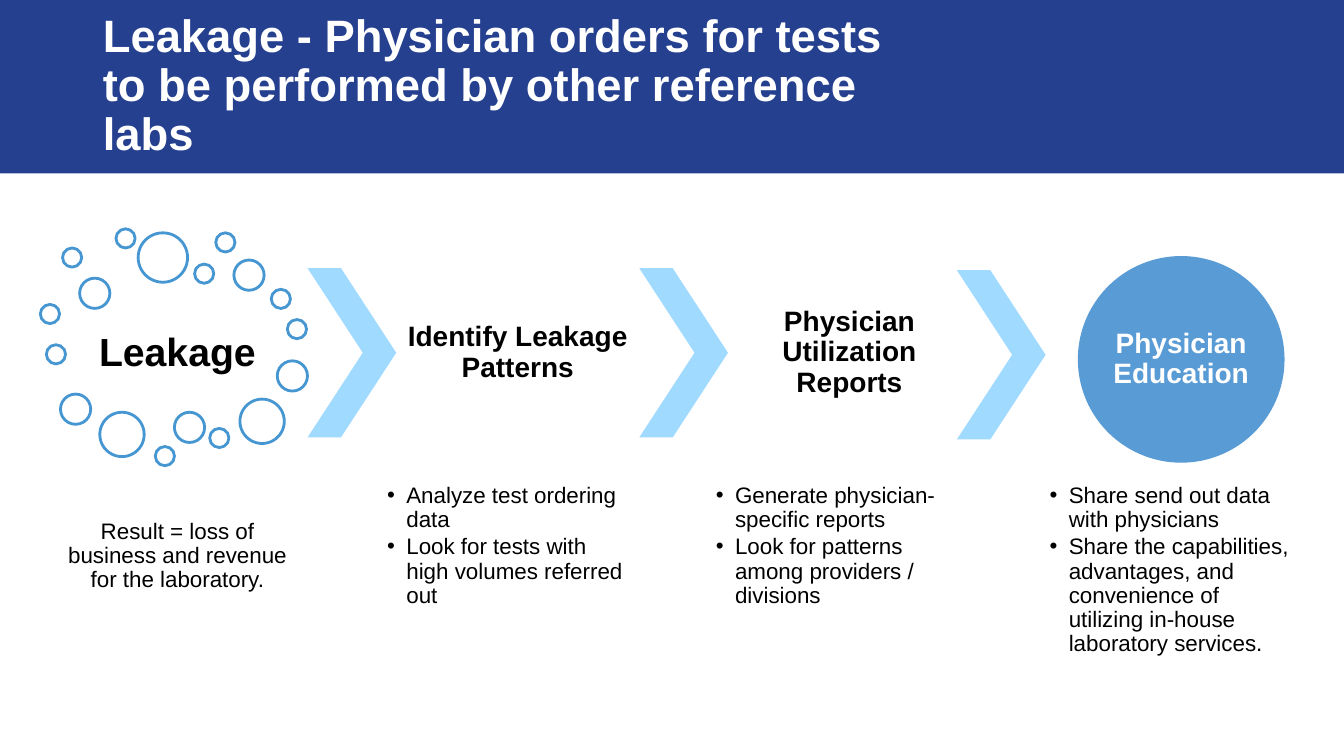
from dataclasses import dataclass

from lxml import etree
from pptx import Presentation
from pptx.dml.color import RGBColor
from pptx.enum.shapes import MSO_SHAPE
from pptx.enum.text import MSO_ANCHOR, MSO_AUTO_SIZE, PP_ALIGN
from pptx.oxml.ns import qn
from pptx.util import Inches, Pt

RECT, OVAL, CHEVRON = MSO_SHAPE.RECTANGLE, MSO_SHAPE.OVAL, MSO_SHAPE.CHEVRON
TOP, MIDDLE = MSO_ANCHOR.TOP, MSO_ANCHOR.MIDDLE
LEFT, CENTER = PP_ALIGN.LEFT, PP_ALIGN.CENTER
NO_AUTOFIT = MSO_AUTO_SIZE.NONE
COMPARISON_LAYOUT = 4  # a title and four body placeholders


@dataclass(frozen=True)
class Theme:
    font: str = "Arial"
    navy: str = "25408F"
    white: str = "FFFFFF"
    black: str = "000000"
    ring: str = "4696D2"
    arrow: str = "A1DAFF"
    circle: str = "599BD5"
    title: float = 32.4
    lead: float = 28
    step: float = 20
    body: float = 16


class SlideBuilder:
    def __init__(self, prs, theme):
        self.theme = theme
        self.slide = prs.slides.add_slide(prs.slide_layouts[COMPARISON_LAYOUT])

    def set_text(self, sp, lines, size, color, bold=False, align=CENTER,
                 anchor=MIDDLE, inset=(0.02, 0.02), bullet=False):
        """Fill a shape's text frame, one paragraph per line."""
        tf = sp.text_frame
        dx, dy = map(Inches, inset)
        frame = dict(word_wrap=True, auto_size=NO_AUTOFIT, vertical_anchor=anchor,
                     margin_left=dx, margin_right=dx, margin_top=dy, margin_bottom=dy)
        for name, value in frame.items():
            setattr(tf, name, value)
        for i, line in enumerate(lines):
            p = tf.paragraphs[0] if i == 0 else tf.add_paragraph()
            self.mark(p, bullet)
            layout = dict(alignment=align, line_spacing=0.9,
                          space_before=Pt(2.4 if i else 0), space_after=Pt(0))
            for name, value in layout.items():
                setattr(p, name, value)
            r = p.add_run()
            r.text = line
            for name, value in dict(name=self.theme.font, size=Pt(size), bold=bold).items():
                setattr(r.font, name, value)
            r.font.color.rgb = RGBColor.from_string(color)

    def mark(self, p, bullet):
        """Set the paragraph's indent and its bullet, or no bullet."""
        pPr = p._p.get_or_add_pPr()
        indent = Inches(0.19) if bullet else 0
        pPr.set("marL", str(indent))
        pPr.set("indent", str(-indent))
        if bullet:
            etree.SubElement(pPr, qn("a:buFont"), typeface=self.theme.font)
            etree.SubElement(pPr, qn("a:buChar"), char="•")
        else:
            etree.SubElement(pPr, qn("a:buNone"))

    def placeholder(self, idx, box, lines, size, color, **style):
        sp = self.slide.placeholders[idx]
        sp.left, sp.top, sp.width, sp.height = map(Inches, box)
        self.set_text(sp, lines, size, color, **style)

    def label(self, box, text, size):
        sp = self.slide.shapes.add_textbox(*map(Inches, box))
        self.set_text(sp, [text], size, self.theme.black, bold=True)

    def shape(self, kind, box, fill, line=None):
        sp = self.slide.shapes.add_shape(kind, *map(Inches, box))
        sp.shadow.inherit = False
        sp.fill.solid()
        sp.fill.fore_color.rgb = RGBColor.from_string(fill)
        if line:
            sp.line.color.rgb = RGBColor.from_string(line)
            sp.line.width = Pt(2)
        else:
            sp.line.fill.background()
        return sp

    def banner(self, box):
        """Draw the title band behind everything else."""
        sp = self.shape(RECT, box, self.theme.navy)
        self.slide.shapes._spTree.insert(2, sp._element)

    def bubble(self, left, top, size):
        self.shape(OVAL, (left, top, size, size), self.theme.white, self.theme.ring)

    def arrow(self, left, top):
        sp = self.shape(CHEVRON, (left, top, 0.88, 1.68), self.theme.arrow)
        sp.adjustments[0] = 0.623


BUBBLES = {  # diameter: (left, top) of each
    0.19: [(0.4, 3.02), (0.62, 2.46), (1.15, 2.27), (1.93, 2.62), (2.14, 2.31),
           (2.69, 2.87), (2.85, 3.17), (0.46, 3.42), (1.54, 4.43), (2.08, 4.25)],
    0.3: [(0.79, 2.76), (2.32, 2.58), (0.6, 3.91), (1.73, 4.09), (2.75, 3.58)],
    0.44: [(0.99, 4.09), (2.38, 3.96)],
    0.49: [(1.37, 2.31)],
}
ARROWS = [(3.05, 2.66), (6.34, 2.66), (9.49, 2.68)]
STEPS = [(3.93, "Identify Leakage Patterns"), (7.22, "Physician Utilization Reports")]
LISTS = [  # left, width, points
    (3.82, 2.41, ["Analyze test ordering data",
                  "Look for tests with high volumes referred out"]),
    (7.08, 2.41, ["Generate physician-specific reports",
                  "Look for patterns among providers / divisions"]),
    (10.39, 2.52, ["Share send out data with physicians",
                   "Share the capabilities, advantages, and convenience of "
                   "utilizing in-house laboratory services."]),
]
DETAIL_TOP, DETAIL_HEIGHT = 4.78, 1.48


def main():
    prs = Presentation()
    prs.slide_width, prs.slide_height = Inches(13.33), Inches(7.5)
    theme = Theme()
    s = SlideBuilder(prs, theme)

    s.banner((0, 0, 13.33, 1.72))
    s.placeholder(0, (0.92, 0.22, 8.39, 1.28),
                  ["Leakage - Physician orders for tests to be performed by other reference labs"],
                  theme.title, theme.white, bold=True, align=LEFT, inset=(0.1, 0.05))

    s.label((0.56, 3.11, 2.4, 0.79), "Leakage", theme.lead)
    s.placeholder(1, (0.56, DETAIL_TOP, 2.4, DETAIL_HEIGHT),
                  ["Result = loss of business and revenue for the laboratory."],
                  theme.body, theme.black)
    for size, spots in BUBBLES.items():
        for left, top in spots:
            s.bubble(left, top, size)

    for left, top in ARROWS:
        s.arrow(left, top)
    for left, text in STEPS:
        s.label((left, 2.66, 2.41, 1.68), text, theme.step)
    goal = s.shape(OVAL, (10.69, 2.54, 2.05, 2.05), theme.circle)
    s.set_text(goal, ["Physician Education"], theme.step, theme.white, bold=True, inset=(0, 0))

    for idx, (left, width, points) in enumerate(LISTS, start=2):
        s.placeholder(idx, (left, DETAIL_TOP, width, DETAIL_HEIGHT), points,
                      theme.body, theme.black, align=LEFT, anchor=TOP, bullet=True)

    prs.save("out.pptx")


if __name__ == "__main__":
    main()
